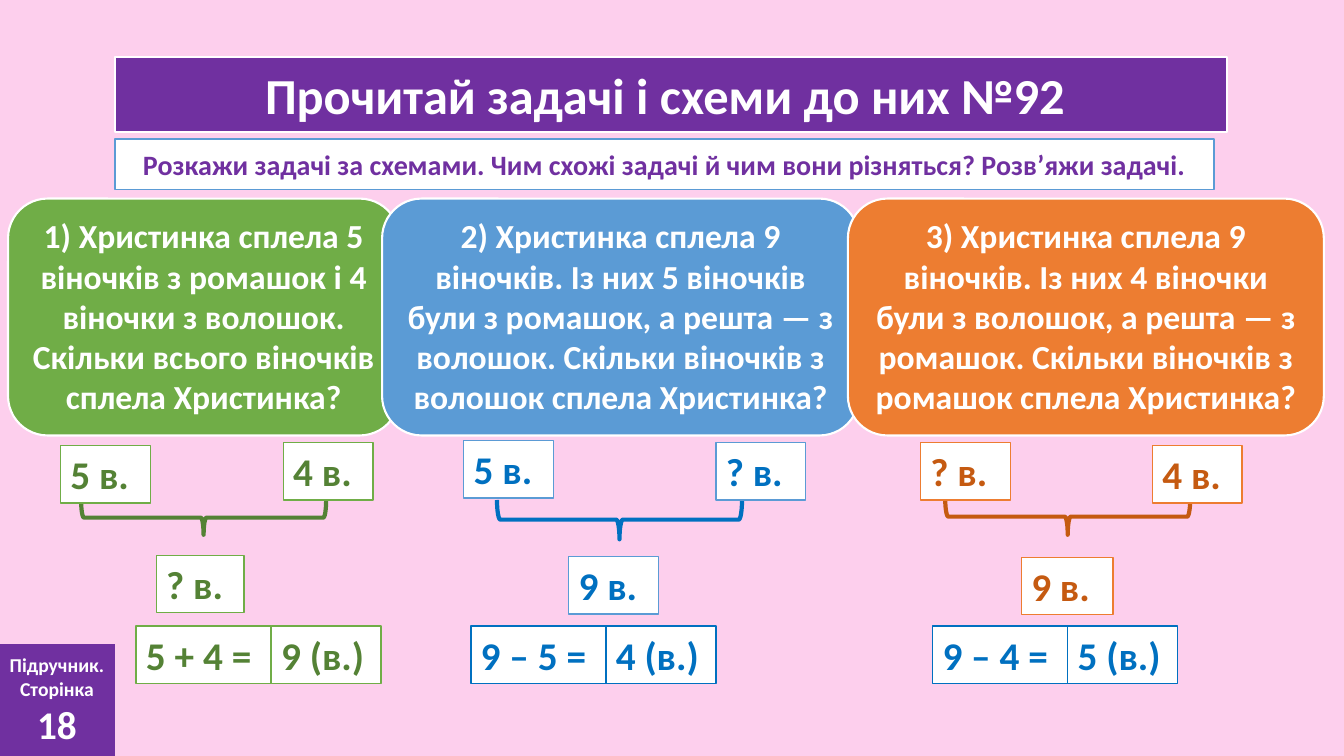
import pptx
import pptx.dml.color
import pptx.enum.shapes
import pptx.enum.text
import pptx.util

Inches = pptx.util.Inches
SHAPES = pptx.enum.shapes.MSO_SHAPE
ALIGN = pptx.enum.text.PP_ALIGN
ANCHOR = pptx.enum.text.MSO_ANCHOR
GROW = pptx.enum.text.MSO_AUTO_SIZE.SHAPE_TO_FIT_TEXT

WHITE, PURPLE, BLUE = "FFFFFF", "7030A0", "0070C0"

presentation = pptx.Presentation()
presentation.slide_width = Inches(13.33)
presentation.slide_height = Inches(7.5)
slide = presentation.slides.add_slide(presentation.slide_layouts[6])


def paint(color_format, color):
    color_format.rgb = pptx.dml.color.RGBColor.from_string(color)


def add_block(place, lines, color, fill, border=None, kind=SHAPES.RECTANGLE,
              width=1, align=ALIGN.CENTER, grow=False, margin=0.1):
    """Add a filled shape; lines holds (text, size) pairs, one per paragraph."""
    block = slide.shapes.add_shape(kind, *map(Inches, place))
    block.shadow.inherit = False
    if fill:
        block.fill.solid()
        paint(block.fill.fore_color, fill)
    else:
        block.fill.background()
    if border:
        paint(block.line.color, border)
        block.line.width = pptx.util.Pt(width)
    else:
        block.line.fill.background()
    frame = block.text_frame
    layout = {
        "word_wrap": True,
        "vertical_anchor": ANCHOR.TOP if grow else ANCHOR.MIDDLE,
        "margin_left": Inches(margin),
        "margin_right": Inches(margin),
    }
    if grow:
        layout["auto_size"] = GROW
    for key, value in layout.items():
        setattr(frame, key, value)
    for index, (text, size) in enumerate(lines):
        paragraph = frame.add_paragraph() if index else frame.paragraphs[0]
        paragraph.alignment = align
        run = paragraph.add_run()
        run.text = text
        for key, value in {"name": "Calibri", "size": pptx.util.Pt(size), "bold": True}.items():
            setattr(run.font, key, value)
        paint(run.font.color, color)
    return block


slide.background.fill.solid()
paint(slide.background.fill.fore_color, "FDCFED")

add_block((1.14, 0.57, 11.03, 0.74), [("Прочитай задачі і схеми до них №92 ", 36)],
          WHITE, PURPLE, WHITE, width=1.5)
add_block((1.14, 1.38, 10.9, 0.5),
          [("Розкажи задачі за схемами. Чим схожі задачі й чим вони різняться? Розв’яжи задачі.", 20)],
          PURPLE, WHITE, "5B9BD5")
add_block((-0.01, 6.39, 1.15, 1.11), [("Підручник.", 14), ("Сторінка", 14), ("18", 28)],
          WHITE, PURPLE, margin=0.05)

# Each problem: card, brace (left, top, thickness), labels and the solution row
problems = [
    {
        "text": "1) Христинка сплела 5 віночків з ромашок і 4 віночки з волошок. "
                "Скільки всього віночків сплела Христинка?",
        "card": (0.08, 3.88), "light": "70AD47", "dark": "548235",
        "brace": (1.85, 3.92, 0.34),
        "labels": [("5 в.", 0.6, 4.42, 0.89), ("4 в.", 2.81, 4.39, 0.89), ("? в.", 1.55, 5.51, 0.87)],
        "solution": ("5 + 4 =", "9 (в.)"), "solution_left": 1.35,
        "solution_border": "70AD47", "solution_color": "548235",
    },
    {
        "text": "2) Христинка сплела 9 віночків. Із них 5 віночків були з ромашок, "
                "а решта — з волошок. Скільки віночків з волошок сплела Христинка?",
        "card": (3.79, 4.73), "light": "5B9BD5", "dark": BLUE,
        "brace": (5.95, 3.94, 0.39),
        "labels": [("5 в.", 4.6, 4.37, 0.89), ("? в.", 7.1, 4.39, 0.89), ("9 в.", 5.64, 5.52, 0.89)],
        "solution": ("9 – 5 =", "4 (в.)"), "solution_left": 4.67,
        "solution_border": BLUE, "solution_color": BLUE,
    },
    {
        "text": "3) Христинка сплела 9 віночків. Із них 4 віночки були з волошок, "
                "а решта — з ромашок. Скільки віночків з ромашок сплела Христинка?",
        "card": (8.41, 4.72), "light": "ED7D31", "dark": "C55A11",
        "brace": (10.41, 3.91, 0.36),
        "labels": [("? в.", 9.13, 4.39, 0.89), ("4 в.", 11.43, 4.42, 0.89), ("9 в.", 10.13, 5.53, 0.91)],
        "solution": ("9 – 4 =", "5 (в.)"), "solution_left": 9.25,
        "solution_border": BLUE, "solution_color": BLUE,
    },
]
LABEL_HEIGHT = 0.57
EXPRESSION_WIDTH, ANSWER_WIDTH = 1.34, 1.09

for problem in problems:
    card_left, card_width = problem["card"]
    add_block((card_left, 1.97, card_width, 2.35), [(problem["text"], 24)], WHITE,
              problem["light"], WHITE, SHAPES.ROUNDED_RECTANGLE, 1.5, grow=True)

    brace_left, brace_top, thickness = problem["brace"]
    brace = add_block((brace_left, brace_top, thickness, 2.43), [], WHITE, None,
                      problem["dark"], SHAPES.LEFT_BRACE, 3)
    brace.rotation = 270

    for text, left, top, width in problem["labels"]:
        add_block((left, top, width, LABEL_HEIGHT), [(text, 28)], problem["dark"],
                  WHITE, problem["light"], align=ALIGN.LEFT, grow=True)

    left = problem["solution_left"]
    for text, width in zip(problem["solution"], (EXPRESSION_WIDTH, ANSWER_WIDTH)):
        add_block((left, 6.21, width, LABEL_HEIGHT), [(text, 28)], problem["solution_color"],
                  WHITE, problem["solution_border"], align=ALIGN.LEFT, grow=True)
        left += width

presentation.save("out.pptx")
